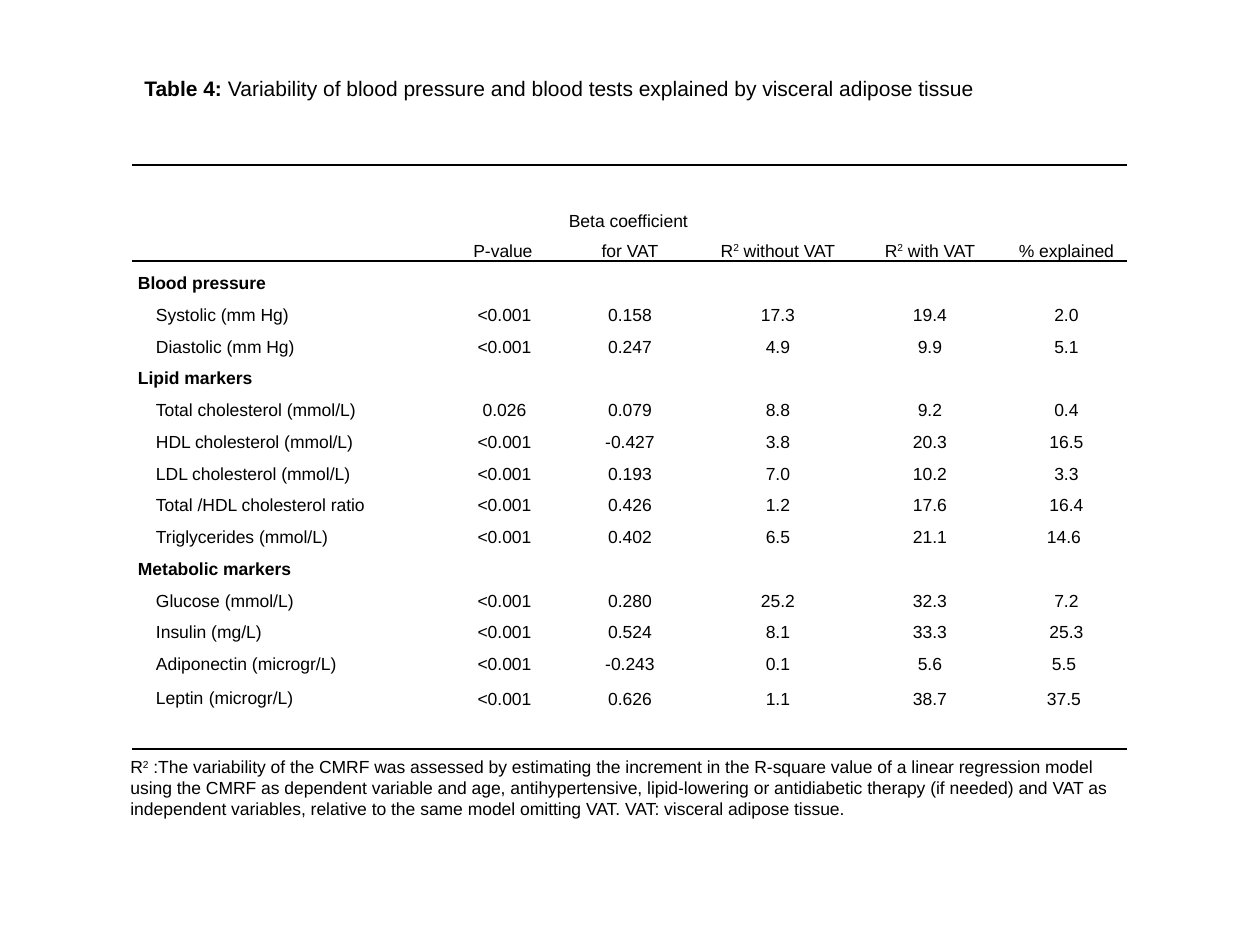
"""Build a slide with a table of variability explained by visceral adipose tissue."""
from typing import NamedTuple

from lxml import etree
from pptx import Presentation
from pptx.dml.color import RGBColor
from pptx.enum.text import MSO_ANCHOR, MSO_AUTO_SIZE, PP_ALIGN
from pptx.oxml.ns import qn
from pptx.util import Pt

BLACK = RGBColor(0, 0, 0)
CENTER, LEFT = PP_ALIGN.CENTER, PP_ALIGN.LEFT
BOTTOM = MSO_ANCHOR.BOTTOM
GROW = MSO_AUTO_SIZE.SHAPE_TO_FIT_TEXT
PLAIN = "{2D5ABB26-0587-4C30-8999-92F81FD0307C}"
SCALE = 914400 / 126


class Run(NamedTuple):
    text: str
    size: int | None = None
    bold: bool | None = None
    face: str | None = None
    base: int = 0


class Box(NamedTuple):
    left: int
    top: int
    width: int
    height: int


class Line(NamedTuple):
    label: tuple[Run, ...]
    values: tuple[str, ...] = ()


def row(label: str, *values: str) -> Line:
    return Line((Run(label),), values)


GAP = Run(" ", 8, face="Calibri")
SQUARE = (Run("R"), Run("2", base=30000))
COLS = (319, 107, 144, 152, 152, 121)
ROWS = (96, *(32, 32, 32, 31) * 3, 32, 35, 40)
GRID = Box(132, 165, sum(COLS), sum(ROWS))
TITLE = Box(132, 66, 995, 42)
NOTE = Box(118, 750, 1023, 97)
HEADS = (
    (),
    (Run("P-value"), GAP),
    (Run("Beta coefficient"), GAP, Run(" for VAT")),
    (*SQUARE, Run(" without VAT")),
    (*SQUARE, Run(" with VAT")),
    (Run("% explained"),),
)
LINES = (
    row("Blood pressure"),
    row("Systolic (mm Hg)", "<0.001", "0.158", "17.3", "19.4", "2.0"),
    row("Diastolic (mm Hg)", "<0.001", "0.247", "4.9", "9.9", "5.1"),
    row("Lipid markers"),
    row("Total cholesterol (mmol/L)", "0.026", "0.079", "8.8", "9.2", "0.4"),
    row("HDL cholesterol (mmol/L)", "<0.001", "-0.427", "3.8", "20.3", "16.5"),
    row("LDL cholesterol (mmol/L)", "<0.001", "0.193", "7.0", "10.2", "3.3"),
    row("Total /HDL cholesterol ratio", "<0.001", "0.426", "1.2", "17.6", "16.4"),
    row("Triglycerides (mmol/L)", "<0.001", "0.402", "6.5", "21.1", "14.6 "),
    row("Metabolic markers"),
    row("Glucose (mmol/L)", "<0.001", "0.280", "25.2", "32.3", "7.2"),
    row("Insulin (mg/L)", "<0.001", "0.524", "8.1", "33.3", "25.3"),
    row("Adiponectin (microgr/L)", "<0.001", "-0.243", "0.1", "5.6", "5.5 "),
    Line((Run("Leptin"), Run(" ", 11), Run("(microgr/L)")),
         ("<0.001", "0.626", "1.1", "38.7", "37.5 ")),
)
HEAD = (Run("Table 4: ", bold=True),
        Run("Variability of blood pressure and blood tests explained by visceral adipose tissue"))
FOOT = (*SQUARE, Run(
    " :The variability of the CMRF was assessed by estimating the increment in the "
    "R-square value of a linear regression model using the CMRF as dependent variable "
    "and age, antihypertensive, lipid-lowering or antidiabetic therapy (if needed) and "
    "VAT as independent variables, relative to the same model omitting VAT. "
    "VAT: visceral adipose tissue."))


def px(count: int) -> int:
    return round(count * SCALE)


def write(para, runs: tuple[Run, ...], size: int = 10, bold: bool = False) -> None:
    font = para.font
    font.name, font.size, font.bold = "Arial", Pt(size), bold
    font.color.rgb = BLACK
    for part in runs:
        run = para.add_run()
        run.text = part.text
        if part.size:
            run.font.size = Pt(part.size)
        if part.bold:
            run.font.bold = True
        if part.face:
            run.font.name = part.face
        if part.base:
            run._r.get_or_add_rPr().set("baseline", str(part.base))


def rule(cell, side: str) -> None:
    line = etree.SubElement(cell._tc.get_or_add_tcPr(), qn(f"a:{side}"), w=str(Pt(1)))
    fill = etree.SubElement(line, qn("a:solidFill"))
    etree.SubElement(fill, qn("a:srgbClr"), val=str(BLACK))


def put(cell, runs: tuple[Run, ...], align=CENTER, bold: bool = False,
        indent: int = 0) -> None:
    cell.fill.background()
    cell.vertical_anchor = BOTTOM
    cell.margin_left = cell.margin_right = px(6)
    cell.margin_top = cell.margin_bottom = 0
    para = cell.text_frame.paragraphs[0]
    para.alignment, para.line_spacing = align, 1.5
    if indent:
        para._p.get_or_add_pPr().set("marL", str(px(indent)))
    write(para, runs, bold=bold)


def draw_grid(slide) -> None:
    table = slide.shapes.add_table(len(ROWS), len(COLS), *map(px, GRID)).table
    table.first_row = table.horz_banding = False
    table._tbl.tblPr.find(qn("a:tableStyleId")).text = PLAIN
    for col, width in zip(table.columns, COLS):
        col.width = px(width)
    for band, height in zip(table.rows, ROWS):
        band.height = px(height)
    last = len(ROWS) - 1
    for spot, head in enumerate(HEADS):
        rule(table.cell(0, spot), "lnT")
        rule(table.cell(0, spot), "lnB")
        rule(table.cell(last, spot), "lnB")
        put(table.cell(0, spot), head)
        put(table.cell(last, spot), ())
    for rank, line in enumerate(LINES, 1):
        group = not line.values
        put(table.cell(rank, 0), line.label, LEFT, group, 0 if group else 18)
        for spot in range(1, len(COLS)):
            runs = () if group else (Run(line.values[spot - 1]),)
            put(table.cell(rank, spot), runs)


def add_text(slide, box: Box, runs: tuple[Run, ...], size: int = 10):
    frame = slide.shapes.add_textbox(*map(px, box)).text_frame
    frame.word_wrap, frame.auto_size = True, GROW
    para = frame.paragraphs[0]
    write(para, runs, size)
    return para


def main() -> None:
    deck = Presentation()
    deck.slide_width, deck.slide_height = px(1260), px(945)
    slide = deck.slides.add_slide(deck.slide_layouts[6])
    draw_grid(slide)
    title = add_text(slide, TITLE, HEAD, 12)
    title.line_spacing, title.space_after = 1.15, Pt(10)
    add_text(slide, NOTE, FOOT)
    deck.save("out.pptx")


if __name__ == "__main__":
    main()
